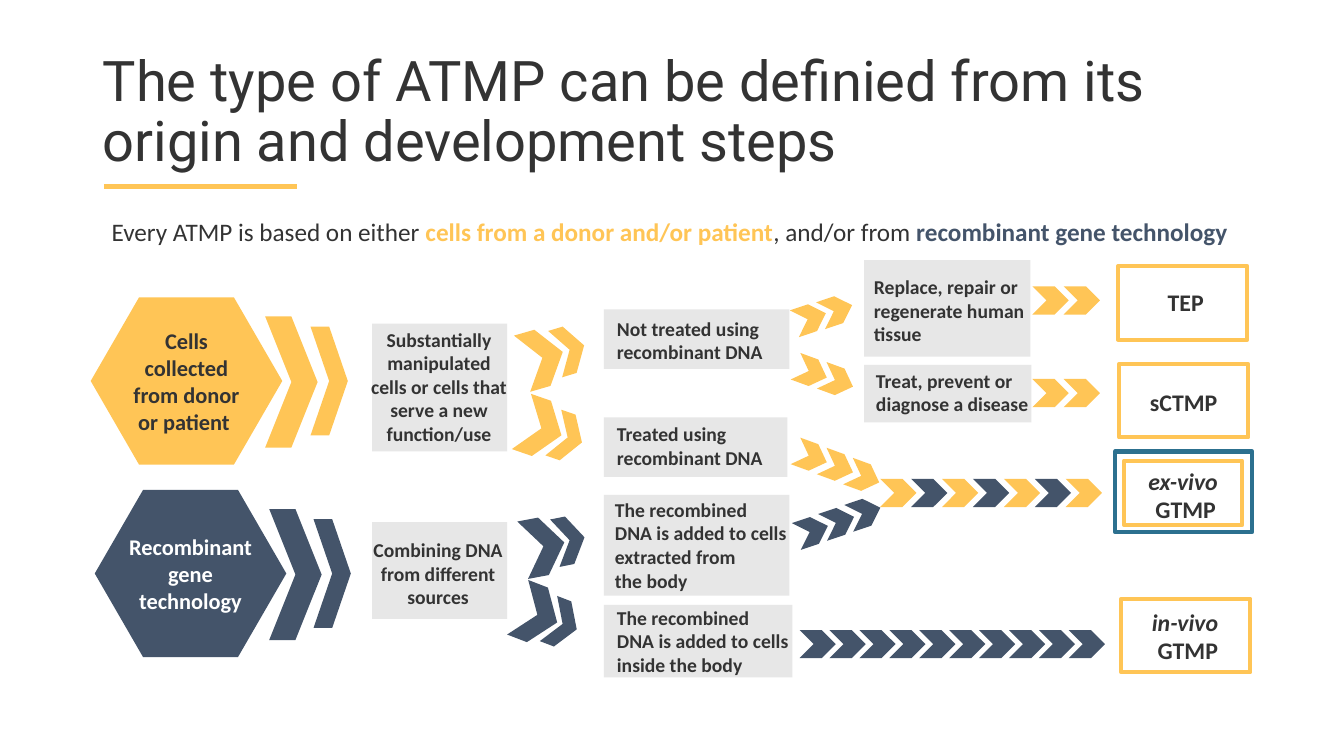
from lxml import etree
from pptx import Presentation
from pptx.dml.color import RGBColor
from pptx.enum.shapes import MSO_CONNECTOR, MSO_SHAPE
from pptx.enum.text import MSO_ANCHOR, PP_ALIGN
from pptx.oxml.ns import qn
from pptx.util import Inches, Pt

RECT, CHEVRON, HEXAGON = MSO_SHAPE.RECTANGLE, MSO_SHAPE.CHEVRON, MSO_SHAPE.HEXAGON
LEFT, CENTER = PP_ALIGN.LEFT, PP_ALIGN.CENTER
TOP, MIDDLE = MSO_ANCHOR.TOP, MSO_ANCHOR.MIDDLE
YELLOW, NAVY, TEAL, INK, GREY, WHITE = "FFC556", "44546A", "2C708F", "333333", "BFBFBF", "FFFFFF"

prs = Presentation()
prs.slide_width, prs.slide_height = Inches(13.33), Inches(7.5)
slide = prs.slides.add_slide(prs.slide_layouts[6])


def add_block(kind, box, fill=None, line=None, rotation=0):
    block = slide.shapes.add_shape(kind, *[Inches(v) for v in box])
    block.shadow.inherit = False
    block.rotation = rotation
    if fill:
        block.fill.solid()
        block.fill.fore_color.rgb = RGBColor.from_string(fill)
    else:
        block.fill.background()
    if line:
        block.line.color.rgb = RGBColor.from_string(line)
        block.line.width = Pt(3)
    else:
        block.line.fill.background()
    return block


def write(holder, paragraphs, size, align=LEFT, anchor=TOP, font="Calibri"):
    frame = holder.text_frame
    frame.word_wrap = True
    frame.vertical_anchor = anchor
    for i, runs in enumerate(paragraphs):
        paragraph = frame.add_paragraph() if i else frame.paragraphs[0]
        paragraph.alignment = align
        for text, color, bold, italic in runs:
            run = paragraph.add_run()
            run.text = text
            run.font.name, run.font.size = font, Pt(size)
            run.font.bold, run.font.italic = bold, italic
            run.font.color.rgb = RGBColor.from_string(color)


underline = slide.shapes.add_connector(
    MSO_CONNECTOR.STRAIGHT, Inches(1.03), Inches(1.85), Inches(2.95), Inches(1.85))
underline.line.color.rgb = RGBColor.from_string(YELLOW)
underline.line.width = Pt(4)
etree.SubElement(underline._element.spPr, qn("a:effectLst"))

title = slide.shapes.add_textbox(Inches(0.92), Inches(0.4), Inches(11.5), Inches(1.45))
write(title, [[("The type of ATMP can be definied from its origin and development steps",
                INK, False, False)]], 40, anchor=MIDDLE, font="Roboto")
title.text_frame.paragraphs[0].line_spacing = 0.9

intro = slide.shapes.add_textbox(Inches(0.92), Inches(2.07), Inches(11.5), Inches(0.46))
write(intro, [[("Every ATMP is based on either ", INK, False, False),
               ("cells from a donor and/or patient", YELLOW, True, False),
               (", and/or from ", INK, False, False),
               ("recombinant gene technology ", NAVY, True, False)]], 18, CENTER, MIDDLE)

steps = [
    ((3.69, 3.21, 1.34, 1.27), (3.57, 3.2, 1.57, 1.28), CENTER,
     ["Substantially manipulated cells or cells that serve a new function/use"]),
    ((3.69, 5.18, 1.34, 0.96), (3.4, 5.29, 1.89, 0.81), CENTER,
     ["Combining DNA from different", "sources"]),
    ((5.99, 3.07, 1.84, 0.59), (6.02, 3.09, 1.84, 0.57), LEFT,
     ["Not treated using recombinant DNA"]),
    ((5.99, 4.14, 1.82, 0.59), (6.02, 4.14, 1.92, 0.57), LEFT,
     ["Treated using recombinant DNA"]),
    ((5.99, 4.91, 1.84, 1), (6, 4.89, 2.19, 1.04), LEFT,
     ["The recombined", "DNA is added to cells extracted from", "the body"]),
    ((5.99, 6, 1.87, 0.72), (6.02, 5.96, 2.09, 0.81), LEFT,
     ["The recombined", "DNA is added to cells", "inside the body"]),
    ((8.57, 2.58, 1.65, 0.96), (8.57, 2.68, 1.9, 0.81), LEFT,
     ["Replace, repair or regenerate human tissue"]),
    ((8.57, 3.62, 1.66, 0.57), (8.59, 3.61, 1.77, 0.57), LEFT,
     ["Treat, prevent or diagnose a disease"]),
]
for panel_box, label_box, align, lines in steps:
    panel = add_block(RECT, panel_box, GREY)
    tint = panel._element.spPr.find(qn("a:solidFill"))[0]
    etree.SubElement(tint, qn("a:alpha"), val="36000")
    label = slide.shapes.add_textbox(*[Inches(v) for v in label_box])
    write(label, [[(line, INK, True, False)] for line in lines], 14, align)

branch_chevrons = [
    ((2.63, 3.14, 0.52, 1.3), 0, YELLOW), ((3.08, 3.24, 0.37, 1.08), 0, YELLOW),
    ((2.67, 5.05, 0.52, 1.3), 0, NAVY), ((3.11, 5.15, 0.37, 1.08), 0, NAVY),
    ((5.17, 3.26, 0.42, 0.58), 343.9, YELLOW), ((5.5, 3.23, 0.3, 0.48), 343.2, YELLOW),
    ((5.16, 3.96, 0.42, 0.58), 19.1, YELLOW), ((5.48, 4.1, 0.3, 0.48), 19.1, YELLOW),
    ((5.18, 5.13, 0.42, 0.58), 349.4, NAVY), ((5.5, 5.12, 0.3, 0.48), 348.8, NAVY),
    ((5.12, 5.81, 0.42, 0.58), 21.1, NAVY), ((5.43, 5.95, 0.3, 0.48), 21, NAVY),
]
for box, rotation, color in branch_chevrons:
    add_block(CHEVRON, box, color, rotation=rotation)

chevron_trails = [
    (7.87, 3.02, 0.26, -0.08, 0.33, 341.5, [YELLOW] * 2),
    (7.88, 3.55, 0.26, 0.09, 0.33, 20, [YELLOW] * 2),
    (7.88, 4.39, 0.26, 0.1, 0.33, 20, [YELLOW] * 3),
    (7.89, 5.13, 0.26, -0.09, 0.33, 341.5, [NAVY] * 3),
    (10.24, 2.84, 0.31, 0, 0.36, 0, [YELLOW] * 2),
    (10.24, 3.76, 0.31, 0, 0.36, 0, [YELLOW] * 2),
    (8.73, 4.75, 1.84 / 6, 0, 0.36, 0, [YELLOW, NAVY] * 3 + [YELLOW]),
    (7.93, 6.25, 2.67 / 9, 0, 0.36, 0, [NAVY] * 10),
]
for x, y, dx, dy, width, rotation, colors in chevron_trails:
    for i, color in enumerate(colors):
        add_block(CHEVRON, (x + i * dx, y + i * dy, width, 0.28), color, rotation=rotation)

origins = [(0.9, 2.95, YELLOW, INK, "Cells collected from donor or patient "),
           (0.94, 4.86, NAVY, WHITE, "Recombinant gene technology")]
for x, y, fill, ink, text in origins:
    origin = add_block(HEXAGON, (x, y, 1.9, 1.66), fill)
    origin.adjustments[0], origin.adjustments[1] = 0.289, 1.155
    origin.text_frame.margin_left = origin.text_frame.margin_right = 0
    write(origin, [[(text, ink, True, False)]], 16, CENTER, MIDDLE)

add_block(RECT, (11.06, 4.48, 1.36, 0.8), line=TEAL)
products = [
    ((11.09, 2.64, 1.28, 0.73), (10.92, 2.6, 1.68, 0.8), [("TEP", False)]),
    ((11.1, 3.61, 1.28, 0.73), (10.9, 3.59, 1.68, 0.8), [("sCTMP", False)]),
    ((11.15, 4.57, 1.17, 0.64), (10.8, 4.43, 1.92, 0.96), [("ex-vivo ", True), ("GTMP", False)]),
    ((11.12, 5.94, 1.28, 0.73), (10.94, 5.91, 1.68, 0.8), [("in-vivo ", True), ("GTMP", False)]),
]
for frame_box, label_box, lines in products:
    add_block(RECT, frame_box, line=YELLOW)
    label = slide.shapes.add_textbox(*[Inches(v) for v in label_box])
    write(label, [[(text, INK, True, italic)] for text, italic in lines], 17, CENTER, MIDDLE)

prs.save("out.pptx")
